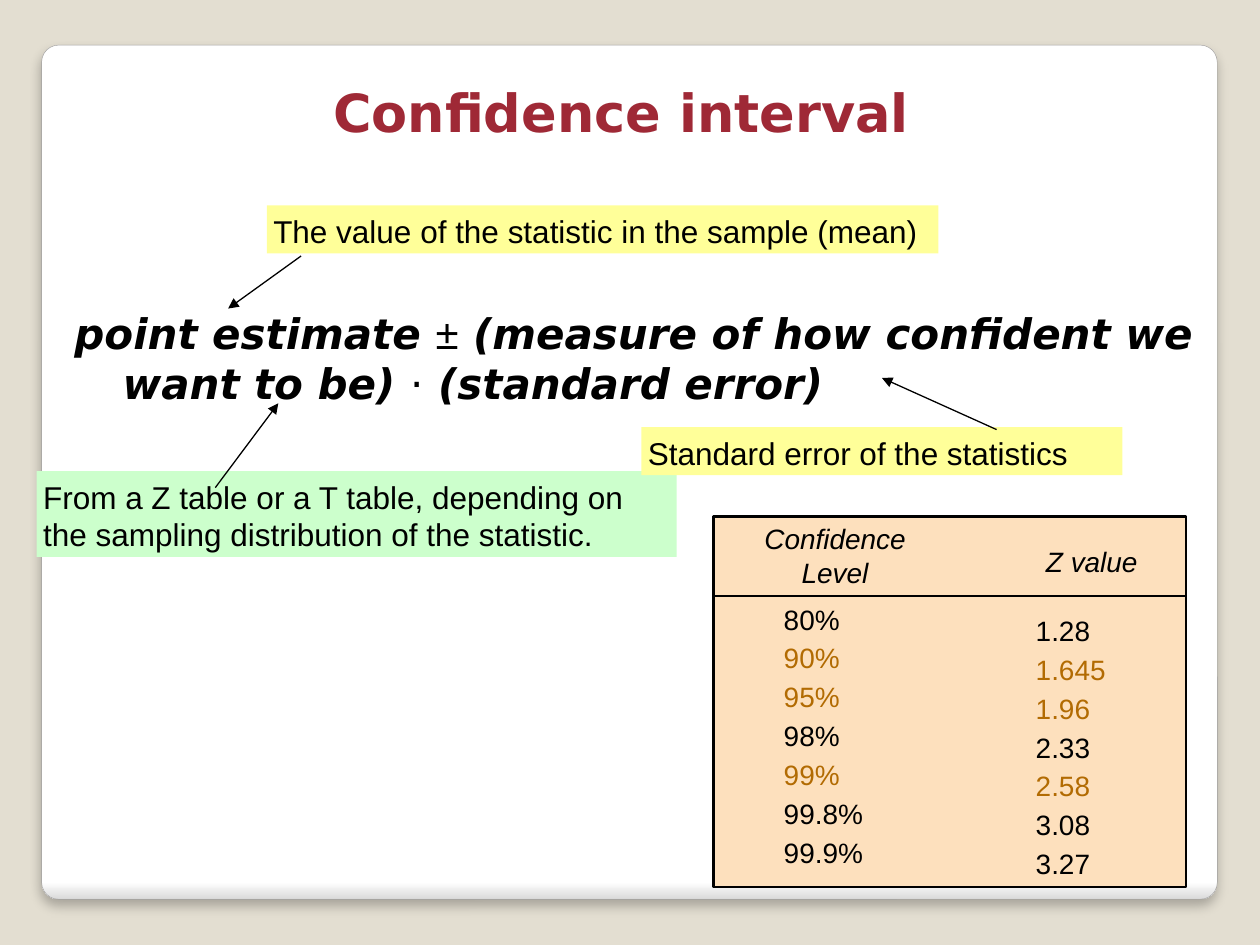
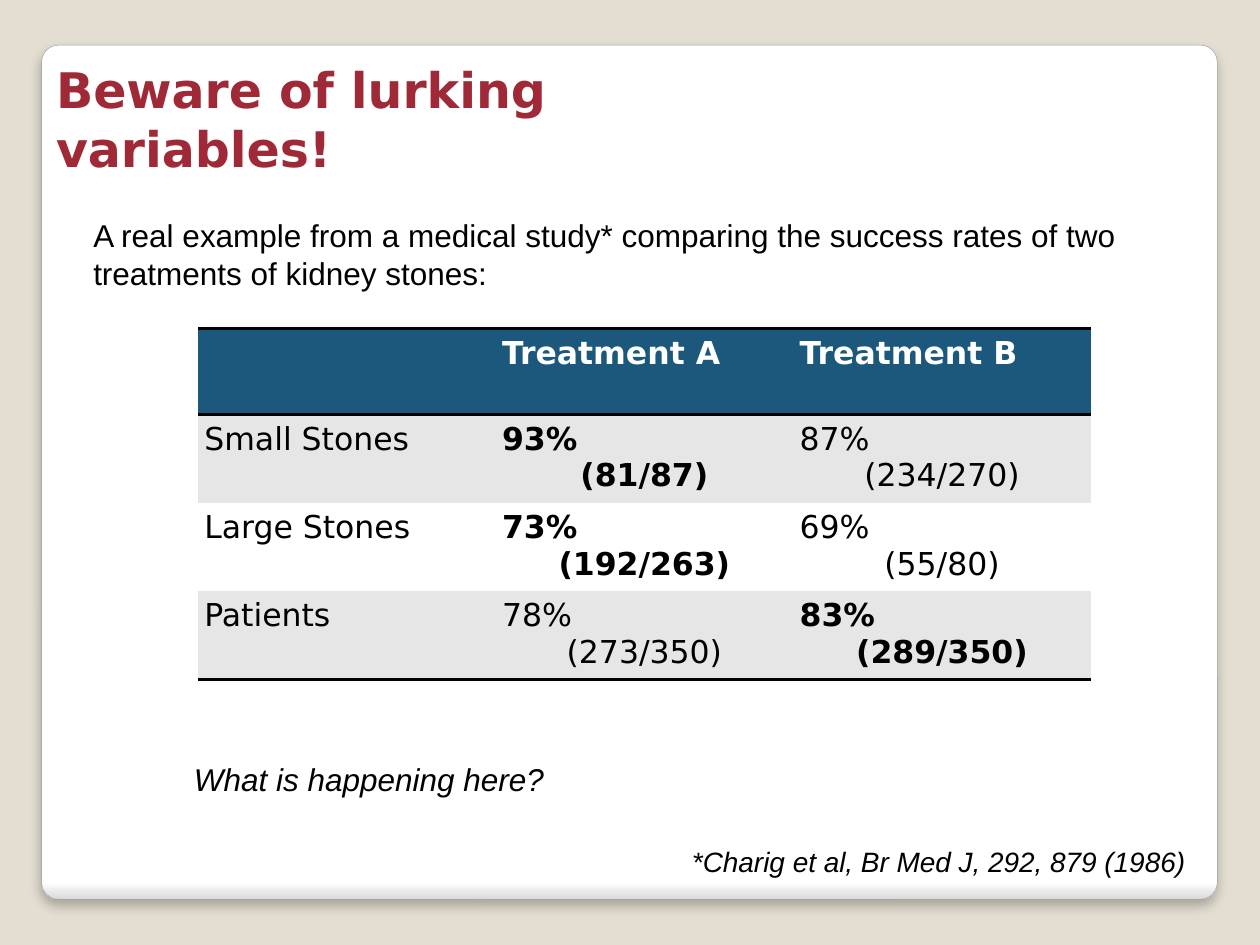
from pptx import Presentation
from pptx.dml.color import RGBColor
from pptx.enum.shapes import MSO_CONNECTOR, MSO_SHAPE
from pptx.enum.text import MSO_ANCHOR, MSO_AUTO_SIZE, PP_ALIGN
from pptx.oxml import parse_xml
from pptx.oxml.ns import nsdecls, qn
from pptx.util import Cm, Pt

RECT, ROUND_RECT = MSO_SHAPE.RECTANGLE, MSO_SHAPE.ROUNDED_RECTANGLE
STRAIGHT = MSO_CONNECTOR.STRAIGHT
LEFT, CENTER = PP_ALIGN.LEFT, PP_ALIGN.CENTER
TOP, BOTTOM = MSO_ANCHOR.TOP, MSO_ANCHOR.BOTTOM
NO_FIT = MSO_AUTO_SIZE.NONE

COLORS = {
    "back": "E3DED1", "white": "FFFFFF", "black": "000000", "edge": "A2A1A1",
    "card_end": "D9D9D9", "title": "9F2936", "yellow": "FFFF99",
    "green": "CCFFCC", "peach": "FDE0BD", "accent": "B26B02",
    "header": "1B587C", "band": "E6E6E6",
}
HEAD_FONT, TEXT_FONT = "DejaVu Sans", "Arial"
NO_STYLE = "{2D5ABB26-0587-4C30-8999-92F81FD0307C}"


def rgb(name):
    return RGBColor.from_string(COLORS[name])


def add_xml(parent, xml):
    parent.append(parse_xml(xml.replace(" ", f" {nsdecls('a')} ", 1)))


class Deck:
    def __init__(self):
        self.prs = Presentation()
        self.prs.slide_width, self.prs.slide_height = Cm(25.4), Cm(19.05)
        self.slide = None
        self.master_done = False

    def new_slide(self, layout):
        self.slide = self.prs.slides.add_slide(self.prs.slide_layouts[layout])
        if not self.master_done:
            self.style_master()
            self.master_done = True

    def style_master(self):
        """Give the master its background and the white card."""
        master = self.prs.slide_master
        master.background.fill.solid()
        master.background.fill.fore_color.rgb = rgb("back")
        card = self.shape(ROUND_RECT, (0.84, 0.91, 23.7, 17.22), "white", "edge", 0.25)
        card.adjustments[0] = 0.02
        card.fill.gradient()
        card.fill.gradient_angle = 270
        for stop, position, color in zip(card.fill.gradient_stops, (0.98, 1),
                                         ("white", "card_end")):
            stop.position = position
            stop.color.rgb = rgb(color)
        add_xml(card.element.spPr.find(qn("a:effectLst")),
                '<a:outerShdw blurRad="76200" dist="50800" dir="5400000">'
                '<a:srgbClr val="000000"><a:alpha val="25000"/></a:srgbClr></a:outerShdw>')
        master.element.cSld.spTree.insert(2, card.element)

    # Text formatting
    def format_run(self, r, size, font=TEXT_FONT, color="black", bold=False, italic=False):
        r.font.size, r.font.name = Pt(size), font
        r.font.bold, r.font.italic = bold, italic
        r.font.color.rgb = rgb(color)

    def fill_text(self, tf, lines, size, align=LEFT, anchor=TOP, before=0,
                  colors=None, **style):
        tf.word_wrap, tf.auto_size, tf.vertical_anchor = True, NO_FIT, anchor
        tf.margin_left = tf.margin_right = tf.margin_top = tf.margin_bottom = Cm(0.13)
        tf.text = "\n".join(lines)
        for i, p in enumerate(tf.paragraphs):
            p.alignment, p.space_before = align, Pt(before)
            if colors:
                style["color"] = colors[i]
            for r in p.runs:
                self.format_run(r, size, **style)

    def place(self, sp, box):
        sp.left, sp.top, sp.width, sp.height = map(Cm, box)

    # Placeholders
    def title(self, text, box, size, **style):
        sp = self.slide.shapes.title
        self.place(sp, box)
        self.fill_text(sp.text_frame, [text], size, font=HEAD_FONT,
                       color="title", bold=True, **style)

    def body(self, lines, box, size, hanging=0, **style):
        sp = self.slide.placeholders[1]
        self.place(sp, box)
        self.fill_text(sp.text_frame, lines, size, **style)
        for p in sp.text_frame.paragraphs:
            pPr = p._p.get_or_add_pPr()
            pPr.set("marL", str(Cm(hanging)))
            pPr.set("indent", str(-Cm(hanging)))
            add_xml(pPr, "<a:buNone />")
        return sp.text_frame

    # Shapes
    def shape(self, kind, box, fill, line=None, width=1.0):
        sp = self.slide.shapes.add_shape(kind, *map(Cm, box))
        sp.fill.solid()
        sp.fill.fore_color.rgb = rgb(fill)
        if line:
            sp.line.color.rgb, sp.line.width = rgb(line), Pt(width)
        else:
            sp.line.fill.background()
        sp.shadow.inherit = False
        return sp

    def label(self, text, box, fill):
        self.fill_text(self.shape(RECT, box, fill).text_frame, [text], 18)

    def text(self, lines, box, size, **style):
        sp = self.slide.shapes.add_textbox(*map(Cm, box))
        self.fill_text(sp.text_frame, lines, size, **style)

    def line(self, start, end, width=0.75, arrow=True):
        sp = self.slide.shapes.add_connector(STRAIGHT, *map(Cm, start + end))
        sp.line.color.rgb, sp.line.width = rgb("black"), Pt(width)
        spPr = sp.element.spPr
        if arrow:
            add_xml(spPr.find(qn("a:ln")), '<a:tailEnd type="triangle"/>')
        add_xml(spPr, "<a:effectLst />")

    # Tables
    def border(self, cell, side):
        add_xml(cell._tc.get_or_add_tcPr(),
                f'<a:{side} w="25400"><a:solidFill><a:srgbClr val="{COLORS["black"]}"/>'
                f'</a:solidFill></a:{side}>')

    def table(self, rows, bold_cells, origin, col_width, heights):
        frame = self.slide.shapes.add_table(
            len(rows), len(rows[0]), *map(Cm, origin),
            Cm(col_width * len(rows[0])), Cm(sum(heights)))
        table = frame.table
        table._tbl.tblPr.find(qn("a:tableStyleId")).text = NO_STYLE
        for col in table.columns:
            col.width = Cm(col_width)
        for i, (values, height) in enumerate(zip(rows, heights)):
            table.rows[i].height = Cm(height)
            for j, value in enumerate(values):
                cell = table.cell(i, j)
                if i == 0:
                    self.border(cell, "lnT")
                if i in (0, len(rows) - 1):
                    self.border(cell, "lnB")
                cell.fill.solid()
                cell.fill.fore_color.rgb = rgb(
                    "header" if i == 0 else "band" if i % 2 else "white")
                cell.margin_left = cell.margin_right = Cm(0.13)
                cell.margin_top = cell.margin_bottom = Cm(0.13)
                cell.text = value
                for p, align in zip(cell.text_frame.paragraphs, (LEFT, CENTER)):
                    p.alignment = align
                    for r in p.runs:
                        self.format_run(r, 18, HEAD_FONT, "white" if i == 0 else "black",
                                        bold=i == 0 or (i, j) in bold_cells)


def confidence_slide(deck):
    deck.new_slide(1)
    deck.title("Confidence interval", (4.6, 1.5, 15.85, 1.52), 30,
               align=CENTER, anchor=BOTTOM)

    # Formula, with the operators upright
    tf = deck.body(["point estimate "], (1.37, 6.07, 23.83, 2.5), 24, hanging=0.97,
                   font=HEAD_FONT, bold=True, italic=True)
    p = tf.paragraphs[0]
    for text in ("±", " (measure of how confident we want to be) ", "⋅",
                 " (standard error)"):
        r = p.add_run()
        r.text = text
        words = len(text) > 1
        deck.format_run(r, 24, HEAD_FONT if words else TEXT_FONT, bold=words, italic=words)

    # Explanations and their arrows
    deck.label("The value of the statistic in the sample (mean)",
               (5.38, 4.14, 13.54, 0.97), "yellow")
    deck.line((6.07, 5.16), (4.6, 6.22))
    deck.label("From a Z table or a T table, depending on the sampling "
               "distribution of the statistic.", (0.74, 9.5, 12.9, 1.73), "green")
    deck.line((4.34, 9.83), (5.61, 8.13))
    deck.label("Standard error of the statistics", (12.93, 8.61, 9.7, 0.97), "yellow")
    deck.line((20.09, 8.66), (17.78, 7.62))

    # Panel of Z values
    levels = [("80%", "1.28"), ("90%", "1.645"), ("95%", "1.96"), ("98%", "2.33"),
              ("99%", "2.58"), ("99.8%", "3.08"), ("99.9%", "3.27")]
    common = {"90%", "95%", "99%"}
    colors = ["accent" if level in common else "black" for level, _ in levels]
    deck.shape(RECT, (14.38, 10.41, 9.53, 7.47), "peach", "black", 1.5)
    deck.text(["Confidence Level"], (14.6, 10.39, 4.47, 1.5), 16, align=CENTER, italic=True)
    deck.text(["Z value"], (20.42, 10.85, 3.18, 0.86), 16, align=CENTER, italic=True)
    for values, left, top in zip(zip(*levels), (15.67, 20.75), (12.01, 12.24)):
        deck.text(values, (left, top, 2.44, 5.49), 16, before=3, colors=colors)
    deck.line((14.38, 12.01), (23.91, 12.01), 1.1, arrow=False)


def lurking_slide(deck):
    deck.new_slide(1)
    deck.title("Beware of lurking variables!", (1, 1.07, 13.5, 2.5), 28)
    deck.body(["A real example from a medical study* comparing the success rates of two",
               "treatments of kidney stones:"], (1.75, 4.22, 21.5, 1.73), 18)

    # Success rates
    rows = [("", "Treatment A", "Treatment B"),
            ("Small Stones", "93%\n(81/87)", "87%\n(234/270)"),
            ("Large Stones", "73%\n(192/263)", "69%\n(55/80)"),
            ("Patients", "78%\n(273/350)", "83%\n(289/350)")]
    better = {(1, 1), (2, 1), (3, 2)}
    deck.table(rows, better, (3.99, 6.63), 6, [1.73, 1.78, 1.78, 1.78])

    # Question and reference
    deck.text(["What is happening here?"], (3.78, 15.19, 7.5, 0.97), 18, italic=True)
    deck.text(["*Charig et al, Br Med J, 292, 879 (1986)"],
              (13.82, 16.89, 10.4, 0.86), 16, italic=True)


def main():
    deck = Deck()
    confidence_slide(deck)
    lurking_slide(deck)
    deck.prs.save("out.pptx")


if __name__ == "__main__":
    main()
